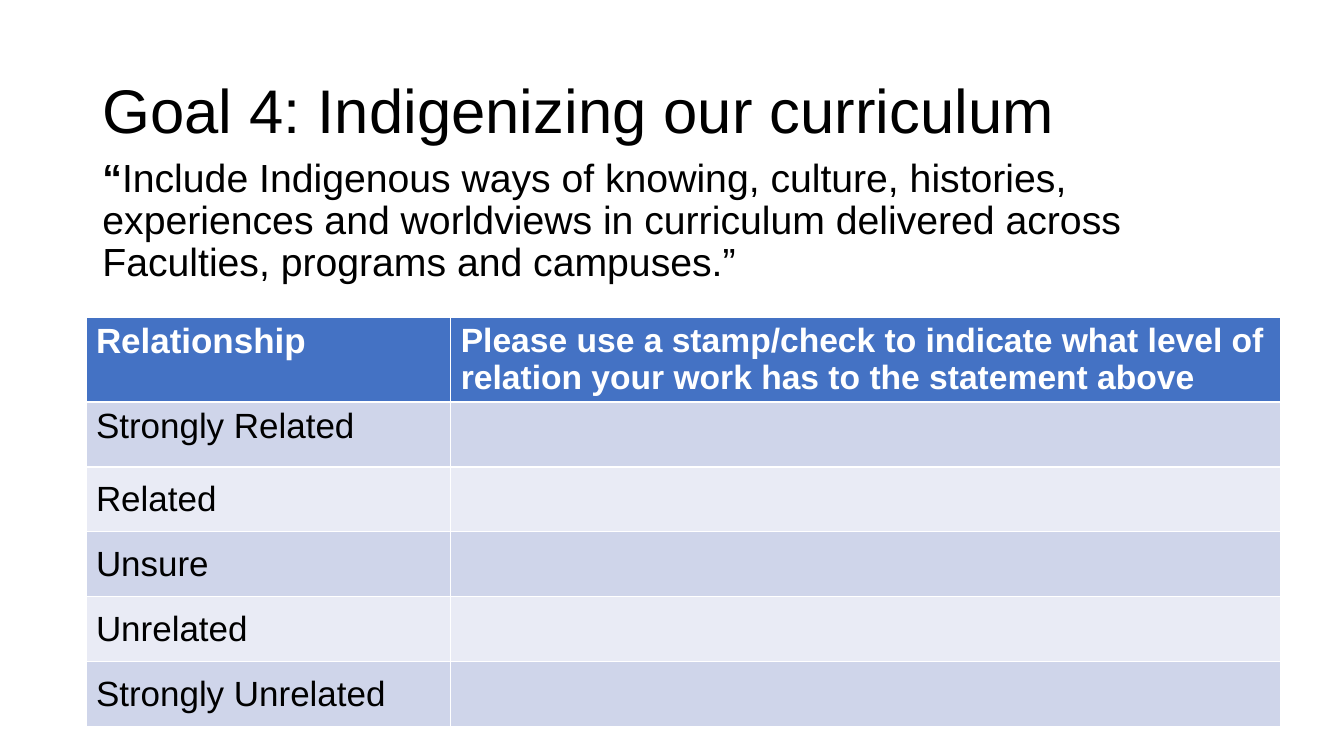
import pptx
import pptx.util
import pptx.dml.color
import pptx.enum.text
import lxml.etree

Pt = pptx.util.Pt
ANCHOR = pptx.enum.text.MSO_ANCHOR
COLOURS = {"text": "000000", "header": "4472C4", "header_text": "FFFFFF",
           "dark_band": "CFD5EA", "light_band": "E9EBF5"}


class SlideBuilder:
    font_name = "Arial"

    def __init__(self, slide):
        self.slide = slide

    def colour(self, key):
        return pptx.dml.color.RGBColor.from_string(COLOURS[key])

    def style(self, paragraph, size, colour="text", bold=None):
        paragraph.font.name = self.font_name
        paragraph.font.size = Pt(size)
        paragraph.font.bold = bold
        paragraph.font.color.rgb = self.colour(colour)

    def place(self, holder, left, top, width, height, size, anchor):
        holder.left, holder.top = Pt(left), Pt(top)
        holder.width, holder.height = Pt(width), Pt(height)
        frame = holder.text_frame
        frame.word_wrap = True
        frame.auto_size = pptx.enum.text.MSO_AUTO_SIZE.NONE
        frame.vertical_anchor = anchor
        paragraph = frame.paragraphs[0]
        paragraph.alignment = pptx.enum.text.PP_ALIGN.LEFT
        paragraph.line_spacing = 0.9
        self.style(paragraph, size)
        return paragraph

    def title(self, text, *box):
        paragraph = self.place(self.slide.shapes.title, *box, 44, ANCHOR.MIDDLE)
        paragraph.add_run().text = text

    def quotation(self, mark, text, *box):
        paragraph = self.place(self.slide.placeholders[1], *box, 28, ANCHOR.TOP)
        paragraph.space_before = Pt(10)
        opening = paragraph.add_run()
        opening.text = mark
        opening.font.bold = True
        paragraph.add_run().text = text
        properties = paragraph._p.get_or_add_pPr()
        properties.set("marL", "0")
        properties.set("indent", "0")
        bullet = lxml.etree.Element(pptx.oxml.ns.qn("a:buNone"))
        properties.find(pptx.oxml.ns.qn("a:defRPr")).addprevious(bullet)

    def cell(self, cell, text, size, fill, colour, bold, anchor):
        cell.fill.solid()
        cell.fill.fore_color.rgb = self.colour(fill)
        cell.vertical_anchor = anchor
        paragraph = cell.text_frame.paragraphs[0]
        self.style(paragraph, size, colour, bold)
        if text:
            paragraph.add_run().text = text

    def rating_table(self, headings, levels, left, top, widths, header_height, row_height):
        height = header_height + row_height * len(levels)
        table = self.slide.shapes.add_table(
            len(levels) + 1, len(widths), Pt(left), Pt(top),
            Pt(sum(widths)), Pt(height)).table
        for column, width in zip(table.columns, widths):
            column.width = Pt(width)
        for index, row in enumerate(table.rows):
            row.height = Pt(row_height if index else header_height)
        for column, (heading, size) in enumerate(headings):
            self.cell(table.cell(0, column), heading, size,
                      "header", "header_text", True, ANCHOR.TOP)
        for row, level in enumerate(levels, 1):
            band = "dark_band" if row % 2 else "light_band"
            anchor = ANCHOR.TOP if row == 1 else ANCHOR.MIDDLE
            for column, text in enumerate((level, "")):
                self.cell(table.cell(row, column), text, 25, band, "text", False, anchor)


def main():
    deck = pptx.Presentation()
    deck.slide_width, deck.slide_height = Pt(960), Pt(540)
    goal = SlideBuilder(deck.slides.add_slide(deck.slide_layouts[1]))
    goal.title("Goal 4: Indigenizing our curriculum", 66, 28.75, 828, 104.4)
    goal.quotation(
        "“", "Include Indigenous ways of knowing, culture, histories, experiences and "
        "worldviews in curriculum delivered across Faculties, programs and campuses.”",
        66, 109.5, 828, 342.6)
    goal.rating_table(
        [("Relationship", 25),
         ("Please use a stamp/check to indicate what level of relation "
          "your work has to the statement above", 24)],
        ["Strongly Related", "Related", "Unsure", "Unrelated", "Strongly Unrelated"],
        61.4, 226.4, [260.6, 593], 56.2, 46.4)
    deck.save("out.pptx")


if __name__ == "__main__":
    main()
